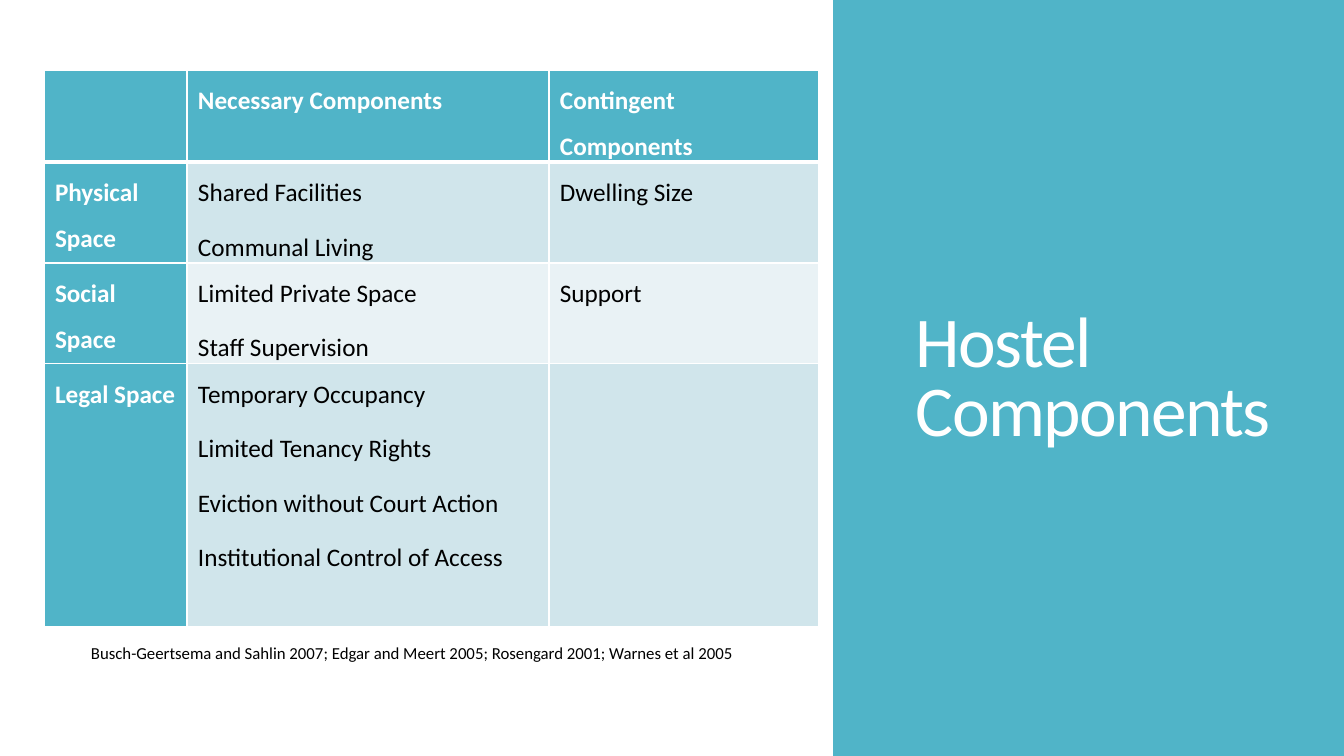
from dataclasses import dataclass

import pptx
import pptx.dml.color
import pptx.enum.shapes
import pptx.enum.text
import pptx.oxml
import pptx.oxml.ns
import pptx.util

RGB = pptx.dml.color.RGBColor
TEAL = RGB(0x50, 0xB4, 0xC8)
WHITE = RGB(0xFF, 0xFF, 0xFF)
BLACK = RGB(0x00, 0x00, 0x00)
BAND_DARK = RGB(0xD0, 0xE5, 0xEB)
BAND_LIGHT = RGB(0xE9, 0xF2, 0xF5)
FONT = "Calibri"
ALIGN = pptx.enum.text.PP_ALIGN
ANCHOR = pptx.enum.text.MSO_ANCHOR
AUTO = pptx.enum.text.MSO_AUTO_SIZE
PX_PER_INCH = 100.8


def px(n: int) -> int:
    return pptx.util.Inches(n / PX_PER_INCH)


@dataclass(frozen=True)
class Box:
    left: int
    top: int
    width: int
    height: int

    def emu(self) -> list[int]:
        return [px(n) for n in (self.left, self.top, self.width, self.height)]


@dataclass(frozen=True)
class Panel:
    box: Box
    color: RGB


@dataclass(frozen=True)
class Label:
    box: Box
    text: str
    size: int
    color: RGB
    frame: dict
    para: dict
    tracking: int = 0


@dataclass(frozen=True)
class Row:
    height: int
    cells: tuple[tuple[str, ...], ...]
    fill: RGB


PANELS = [
    Panel(Box(0, 0, 1344, 756), TEAL),
    Panel(Box(0, 0, 833, 756), WHITE),
]
LABELS = [
    Label(Box(906, 85, 382, 370), "Hostel Components", 51, WHITE,
          {"word_wrap": True, "vertical_anchor": ANCHOR.BOTTOM},
          {"line_spacing": 0.8}, -120),
    Label(Box(81, 638, 672, 30),
          "Busch-Geertsema and Sahlin 2007; Edgar and Meert 2005; "
          "Rosengard 2001; Warnes et al 2005", 12, BLACK,
          {"word_wrap": True, "auto_size": AUTO.SHAPE_TO_FIT_TEXT}, {}),
]
COLUMNS = (143, 362, 270)
ROWS = [
    Row(87, ((), ("Necessary Components",), ("Contingent Components",)), TEAL),
    Row(87, (("Physical Space",), ("Shared Facilities", "Communal Living"),
             ("Dwelling Size",)), BAND_DARK),
    Row(87, (("Social Space",), ("Limited Private Space", "Staff Supervision"),
             ("Support",)), BAND_LIGHT),
    Row(263, (("Legal Space",),
              ("Temporary Occupancy", "Limited Tenancy Rights",
               "Eviction without Court Action",
               "Institutional Control of Access"), ()), BAND_DARK),
]
CELL_MARGINS = {"margin_left": px(11), "margin_right": px(11),
                "margin_top": 0, "margin_bottom": 0}
CELL_PARA = {"alignment": ALIGN.JUSTIFY, "line_spacing": 1.5,
             "space_after": pptx.util.Pt(6)}


def apply(target: object, values: dict) -> None:
    for name, value in values.items():
        setattr(target, name, value)


def add_run(p, text: str, size: int, color: RGB, bold: bool = False):
    r = p.add_run()
    r.text = text
    apply(r.font, {"name": FONT, "size": pptx.util.Pt(size), "bold": bold})
    r.font.color.rgb = color
    return r


def add_panel(s, panel: Panel) -> None:
    sp = s.shapes.add_shape(pptx.enum.shapes.MSO_SHAPE.RECTANGLE, *panel.box.emu())
    sp.shadow.inherit = False
    sp.fill.solid()
    sp.fill.fore_color.rgb = panel.color
    sp.line.fill.background()


def add_label(s, label: Label) -> None:
    tf = s.shapes.add_textbox(*label.box.emu()).text_frame
    apply(tf, label.frame)
    p = tf.paragraphs[0]
    apply(p, label.para)
    r = add_run(p, label.text, label.size, label.color)
    if label.tracking:
        r.font._element.set("spc", str(label.tracking))


def add_borders(cell, widths: dict[str, int]) -> None:
    tc_pr = cell._tc.get_or_add_tcPr()
    for side, width in widths.items():
        tc_pr.append(pptx.oxml.parse_xml(
            f'<a:ln{side} {pptx.oxml.ns.nsdecls("a")} w="{pptx.util.Pt(width)}">'
            f'<a:solidFill><a:srgbClr val="{WHITE}"/></a:solidFill></a:ln{side}>'))


def fill_cell(cell, lines: tuple[str, ...], fill: RGB, heading: bool,
              widths: dict[str, int]) -> None:
    add_borders(cell, widths)
    cell.fill.solid()
    cell.fill.fore_color.rgb = TEAL if heading else fill
    apply(cell, CELL_MARGINS)
    tf = cell.text_frame
    for i, line in enumerate(lines):
        p = tf.add_paragraph() if i else tf.paragraphs[0]
        apply(p, CELL_PARA)
        add_run(p, line, 18, WHITE if heading else BLACK, heading)


def add_components_table(s, left: int, top: int) -> None:
    box = Box(left, top, sum(COLUMNS), sum(row.height for row in ROWS))
    table = s.shapes.add_table(len(ROWS), len(COLUMNS), *box.emu()).table
    apply(table, {"first_row": False, "horz_banding": False})
    for j, width in enumerate(COLUMNS):
        table.columns[j].width = px(width)
    for i, row in enumerate(ROWS):
        table.rows[i].height = px(row.height)
        widths = {"L": 1, "R": 1, "T": 3 if i == 1 else 1, "B": 3 if i == 0 else 1}
        for j, lines in enumerate(row.cells):
            fill_cell(table.cell(i, j), lines, row.fill, i == 0 or j == 0, widths)


def main() -> None:
    prs = pptx.Presentation()
    apply(prs, {"slide_width": px(1344), "slide_height": px(756)})
    s = prs.slides.add_slide(prs.slide_layouts[6])
    s.background.fill.solid()
    s.background.fill.fore_color.rgb = TEAL
    for panel in PANELS:
        add_panel(s, panel)
    add_components_table(s, 44, 70)
    for label in LABELS:
        add_label(s, label)
    prs.save("out.pptx")


if __name__ == "__main__":
    main()
